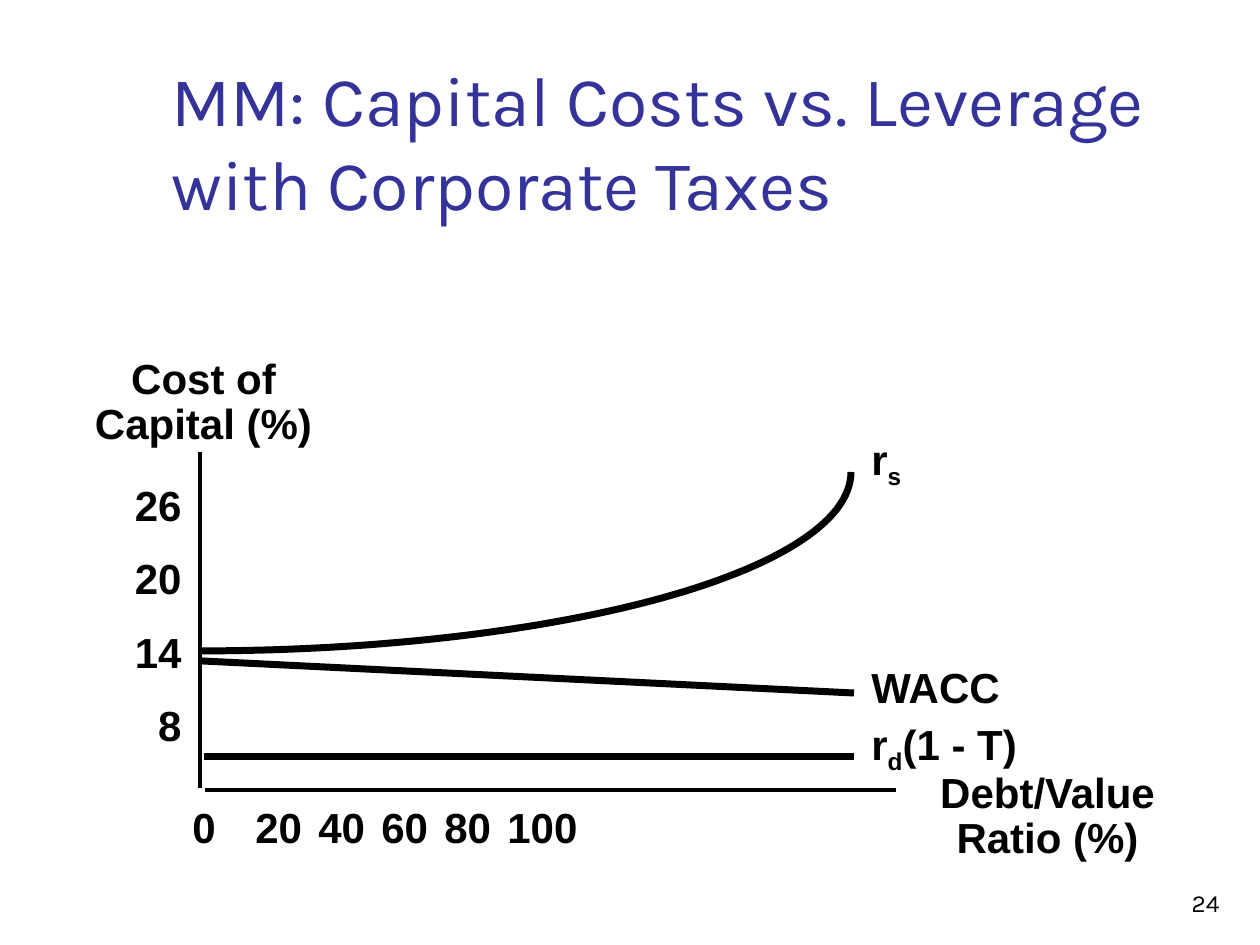
import math

import pptx
import pptx.dml.color
import pptx.enum.shapes
import pptx.enum.text
import pptx.util
from pptx.oxml.ns import qn

ALIGN = pptx.enum.text.PP_ALIGN
ANCHOR = pptx.enum.text.MSO_ANCHOR
EMU_PER_PX = 914400 / 126
BLACK, INDIGO = "000000", "333399"


def px(length):
    return pptx.util.Emu(round(length * EMU_PER_PX))


def color(hex_code):
    return pptx.dml.color.RGBColor.from_string(hex_code)


class LeverageSlide:
    heading_font = "Karla"
    label_font = "Arial"
    label_size = 24
    axis_weight = 2
    curve_weight = 4

    def __init__(self, deck):
        self.slide = deck.slides.add_slide(deck.slide_layouts[6])

    def text_frame(self, box, anchor=ANCHOR.TOP, wrap=True):
        frame = self.slide.shapes.add_textbox(*map(px, box)).text_frame
        frame.word_wrap = wrap
        frame.vertical_anchor = anchor
        return frame

    def add_run(self, paragraph, text, font, size, bold=False, hue=BLACK):
        run = paragraph.add_run()
        run.text = text
        run.font.name = font
        run.font.size = pptx.util.Pt(size)
        run.font.bold = bold
        run.font.color.rgb = color(hue)
        return run

    def heading(self, box, text, size, hue=BLACK, align=ALIGN.LEFT):
        """Bottom-anchored text in the heading font."""
        paragraph = self.text_frame(box, ANCHOR.BOTTOM).paragraphs[0]
        paragraph.alignment = align
        self.add_run(paragraph, text, self.heading_font, size, hue=hue)

    def label(self, box, lines, align=ALIGN.LEFT, spacing=None, gap=0, wrap=True):
        """Bold text; each line is a list of (text, is_subscript) parts."""
        frame = self.text_frame(box, wrap=wrap)
        for index, parts in enumerate(lines):
            paragraph = frame.add_paragraph() if index else frame.paragraphs[0]
            paragraph.alignment = align
            if spacing:
                paragraph.line_spacing = spacing
            if gap and index:
                paragraph.space_before = pptx.util.Pt(gap)
            for text, is_subscript in parts:
                run = self.add_run(paragraph, text, self.label_font, self.label_size, True)
                if is_subscript:
                    run.font._element.set("baseline", "-25000")

    def line(self, start, end, weight):
        connector = self.slide.shapes.add_connector(
            pptx.enum.shapes.MSO_CONNECTOR.STRAIGHT, *map(px, start + end))
        connector.line.color.rgb = color(BLACK)
        connector.line.width = pptx.util.Pt(weight)
        connector._element.spPr.append(
            connector._element.makeelement(qn("a:effectLst"), {}))

    def quarter_ellipse(self, start, end, steps=60):
        """Open curve that leaves start level and reaches end upright."""
        (left, bottom), (right, top) = start, end
        angles = [math.pi / 2 * step / steps for step in range(steps + 1)]
        points = [(px(left + (right - left) * math.sin(angle)),
                   px(top + (bottom - top) * math.cos(angle))) for angle in angles]
        builder = self.slide.shapes.build_freeform(*points[0])
        builder.add_line_segments(points[1:], close=False)
        curve = builder.convert_to_shape()
        curve.shadow.inherit = False
        curve.fill.background()
        curve.line.color.rgb = color(BLACK)
        curve.line.width = pptx.util.Pt(self.curve_weight)


def main():
    deck = pptx.Presentation()
    deck.slide_width, deck.slide_height = px(1260), px(945)
    page = LeverageSlide(deck)

    page.heading((159, 29, 1074, 202),
                 "MM: Capital Costs vs. Leverage with Corporate Taxes", 40, INDIGO)
    page.heading((970, 861, 262, 63), "24", 14, align=ALIGN.RIGHT)

    # Axes
    page.line((200, 452), (200, 788), page.axis_weight)
    page.line((205, 790), (896, 790), page.axis_weight)
    for box, axis_title in [((75, 352, 257, 105), "Cost of Capital (%)"),
                            ((919, 766, 257, 105), "Debt/Value Ratio (%)")]:
        page.label(box, [[(axis_title, False)]], ALIGN.CENTER, spacing=0.9)
    cost_ticks = [[(str(cost), False)] for cost in range(26, 7, -6)]
    page.label((122, 473, 72, 291), cost_ticks, ALIGN.RIGHT, gap=13.2)
    ratio_ticks = "\t".join(str(ratio) for ratio in range(0, 101, 20))
    page.label((180, 795, 1007, 64), [[(ratio_ticks, False)]])

    # Cost curves
    page.quarter_ellipse((199, 651), (851, 472))
    page.line((202, 661), (854, 693), page.curve_weight)
    page.line((204, 757), (854, 757), page.curve_weight)
    curve_names = [
        (427, 57, [("r", False), ("s", True)]),
        (655, 158, [("WACC", False)]),
        (712, 173, [("r", False), ("d", True), ("(1 - T)", False)]),
    ]
    for top, width, parts in curve_names:
        page.label((859, top, width, 63), [parts], wrap=False)

    deck.save("out.pptx")


if __name__ == "__main__":
    main()
